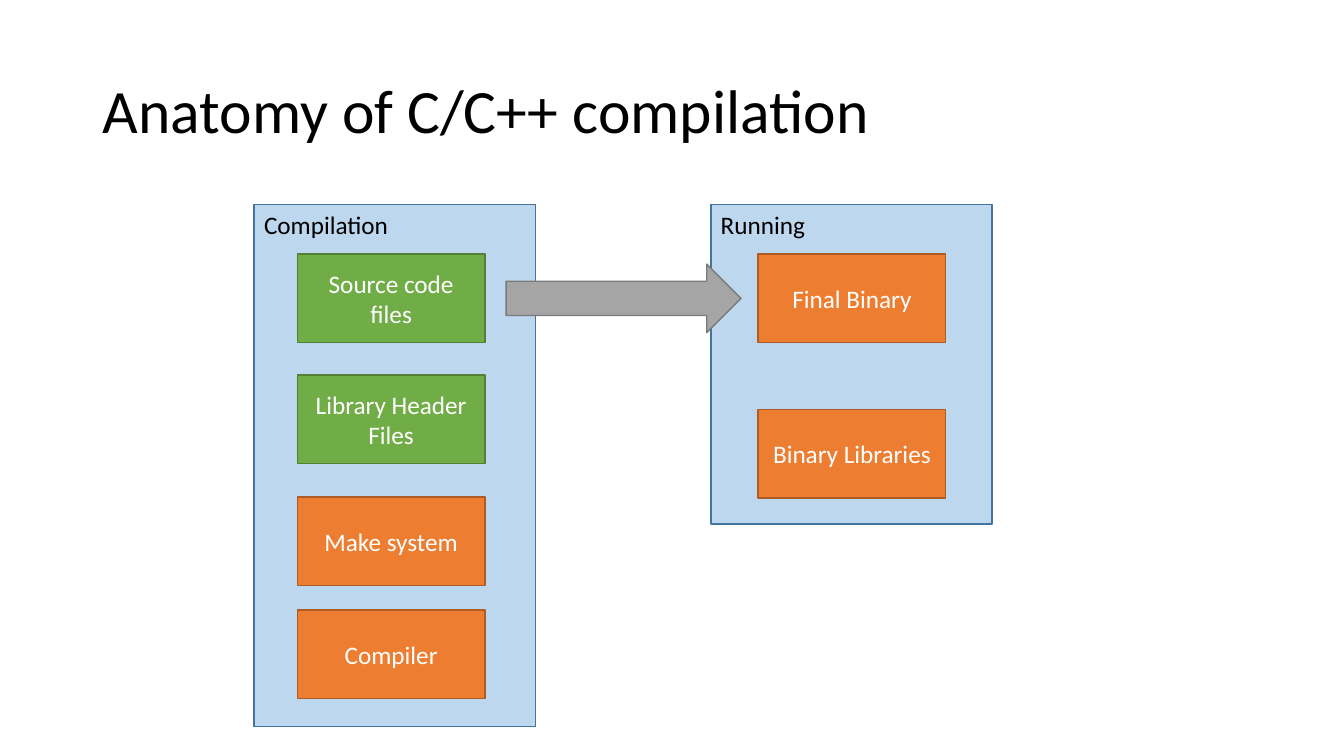
from pptx import Presentation
from pptx import util as u
from pptx.dml.color import RGBColor
from pptx.enum import shapes, text

PX = 9144  # 100 px to the inch
COLOURS = {
    "black": "000000", "white": "FFFFFF",
    "panel": "BDD7EE", "panel line": "43739E",
    "input": "70AD47", "input line": "538035",
    "tool": "ED7D31", "tool line": "AF5C24",
    "arrow": "A5A5A5", "arrow line": "7A7A7A",
}
BOX_WIDTH, BOX_HEIGHT = 186, 88
PANEL_TOP, PANEL_WIDTH = 203, 279


def write(frame, words, size, colour, align, anchor):
    frame.word_wrap = True
    frame.vertical_anchor = anchor
    para = frame.paragraphs[0]
    para.alignment = align
    span = para.add_run()
    span.text = words
    span.font.name = "Calibri"
    span.font.size = u.Pt(size)
    span.font.color.rgb = RGBColor.from_string(COLOURS[colour])


def add_box(page, preset, bounds, role):
    box = page.shapes.add_shape(preset, *(n * PX for n in bounds))
    box.shadow.inherit = False
    box.fill.solid()
    box.fill.fore_color.rgb = RGBColor.from_string(COLOURS[role])
    box.line.color.rgb = RGBColor.from_string(COLOURS[role + " line"])
    box.line.width = u.Pt(1)
    return box


deck = Presentation()
deck.slide_width, deck.slide_height = 1333 * PX, 750 * PX
page = deck.slides.add_slide(deck.slide_layouts[5])

title = page.shapes.title
title.left, title.top, title.width, title.height = (n * PX for n in (92, 40, 1150, 145))
write(title.text_frame, "Anatomy of C/C++ compilation", 44, "black",
      text.PP_ALIGN.LEFT, text.MSO_ANCHOR.MIDDLE)
title.text_frame.paragraphs[0].line_spacing = 0.9

# Each stage: name, panel left, panel height, box left, steps (label, top, role)
stages = [
    ("Running", 705, 317, 752, [
        ("Final Binary", 252, "tool"),
        ("Binary Libraries", 406, "tool"),
    ]),
    ("Compilation", 252, 518, 295, [
        ("Source code files", 252, "input"),
        ("Library Header Files", 372, "input"),
        ("Make system", 493, "tool"),
        ("Compiler", 605, "tool"),
    ]),
]
RECTANGLE = shapes.MSO_SHAPE.RECTANGLE
for name, panel_left, panel_height, box_left, steps in stages:
    panel = add_box(page, RECTANGLE,
                    (panel_left, PANEL_TOP, PANEL_WIDTH, panel_height), "panel")
    write(panel.text_frame, name, 18, "black",
          text.PP_ALIGN.LEFT, text.MSO_ANCHOR.TOP)
    for label, top, role in steps:
        box = add_box(page, RECTANGLE, (box_left, top, BOX_WIDTH, BOX_HEIGHT), role)
        write(box.text_frame, label, 18, "white",
              text.PP_ALIGN.CENTER, text.MSO_ANCHOR.MIDDLE)

add_box(page, shapes.MSO_SHAPE.RIGHT_ARROW, (502, 262, 233, 68), "arrow")

deck.save("out.pptx")
